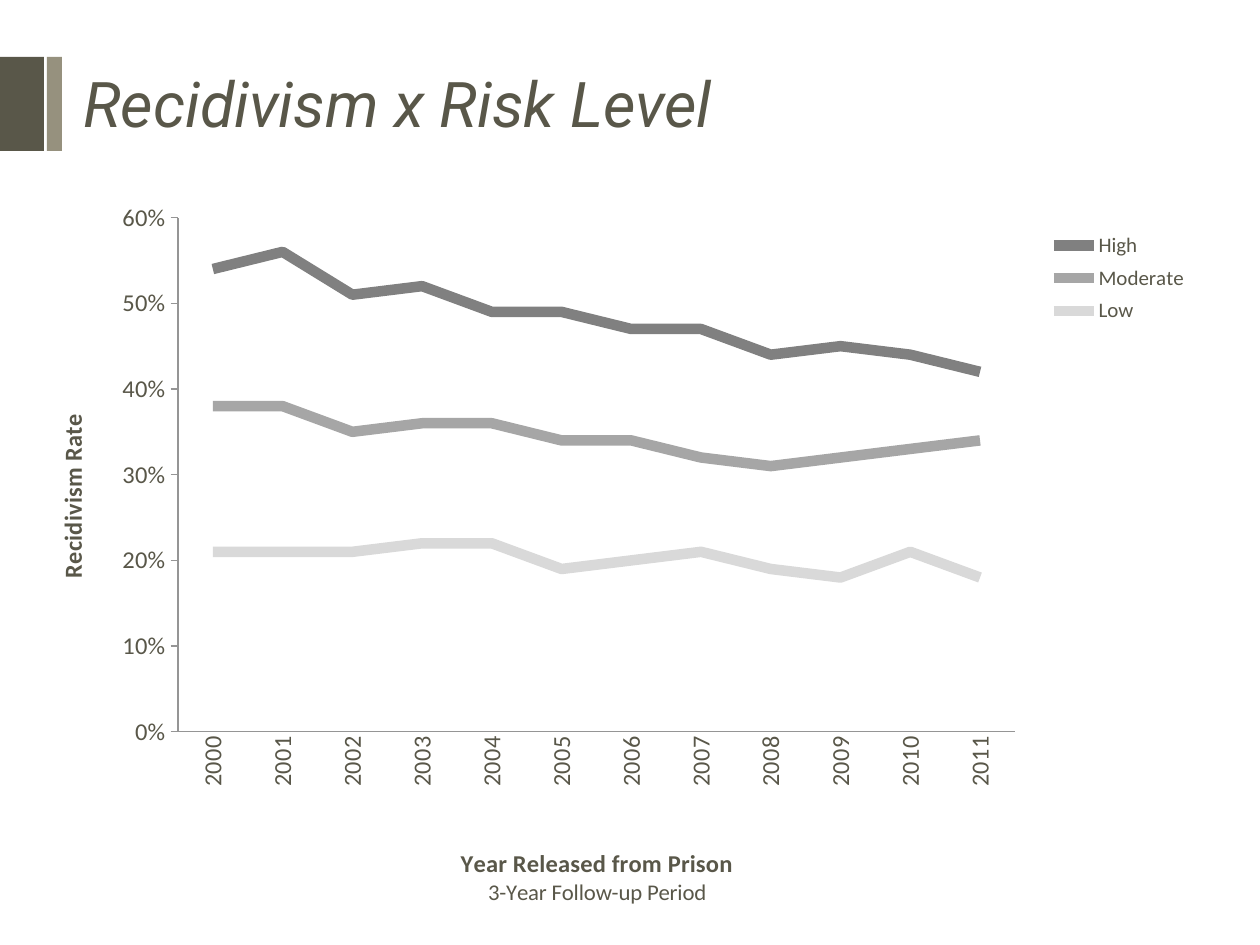
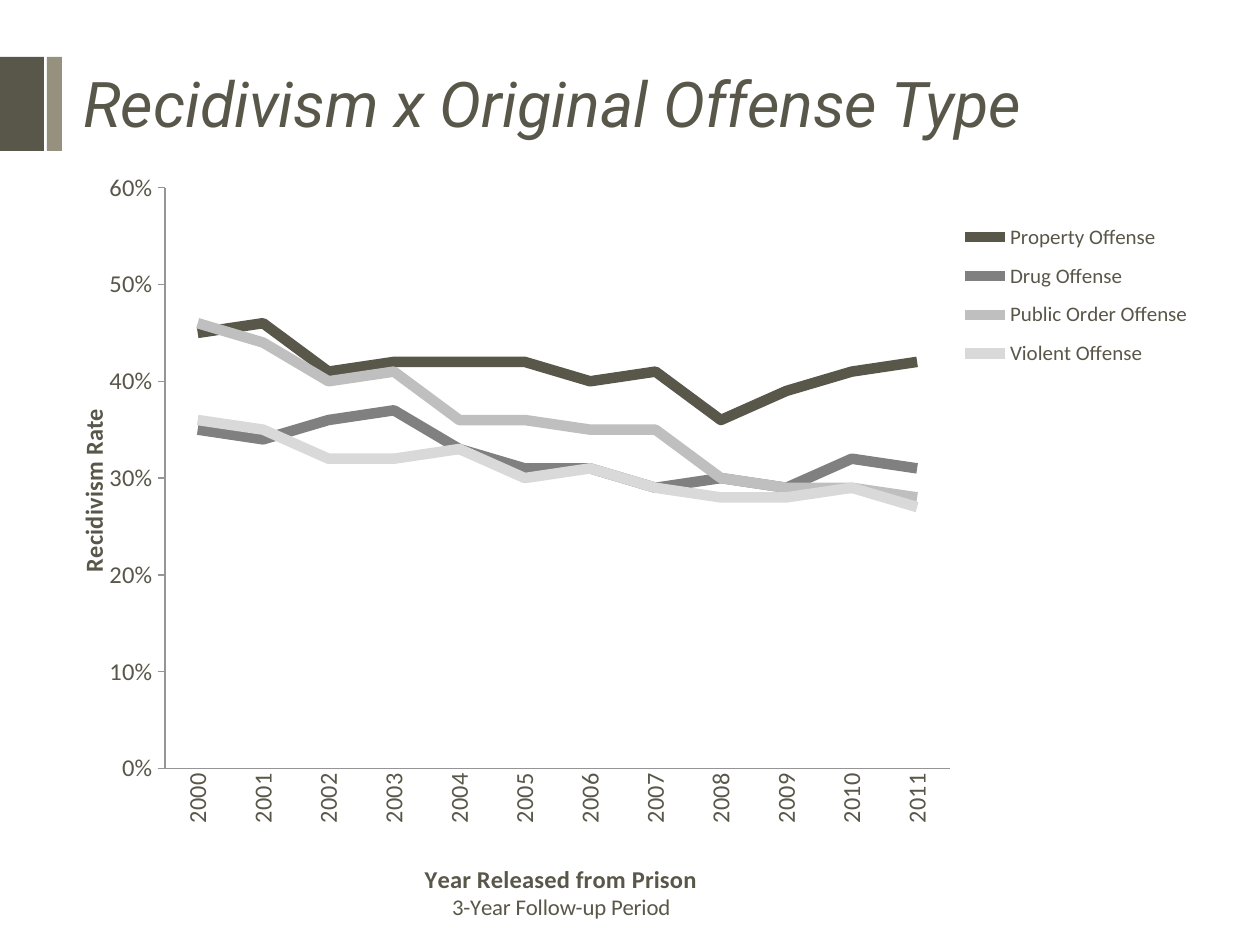
from lxml import etree
from pptx import Presentation
from pptx.chart.data import CategoryChartData
from pptx.dml.color import RGBColor
from pptx.enum.chart import XL_CHART_TYPE, XL_LEGEND_POSITION, XL_TICK_MARK
from pptx.enum.shapes import MSO_SHAPE
from pptx.enum.text import MSO_ANCHOR
from pptx.oxml.ns import qn
from pptx.util import Emu, Pt

LINE_CHART = XL_CHART_TYPE.LINE
LEGEND_RIGHT = XL_LEGEND_POSITION.RIGHT
TICK_NONE, TICK_OUT = XL_TICK_MARK.NONE, XL_TICK_MARK.OUTSIDE
RECTANGLE = MSO_SHAPE.RECTANGLE
MIDDLE = MSO_ANCHOR.MIDDLE

EMU_PER_PX = 914400 / 126
INK, OLIVE, AXIS_GREY = "595749", "96917E", "959595"
TITLE_FONT, CHART_FONT = "Roboto", "Calibri"
YEARS = [str(year) for year in range(2000, 2012)]
BANDS = [((0, 57, 44, 94), INK), ((47, 57, 15, 94), OLIVE)]
TITLE_BOX = (71, 55, 1071, 95)
QUARTER_TURN_LEFT = "-5400000"

# Boxes are left, top, width, height in px on the slide; axis titles need left and top only.
SLIDES = [
    {
        "title": "Recidivism x Risk Level",
        "chart": (32, 189, 1176, 724),
        "plot": (178, 218, 837, 521),
        "legend": (1035, 226, 168, 107),
        "rate_title": (51, 415),
        "year_title": (457, 852),
        "series": [
            ("High", "808080", [0.54, 0.56, 0.51, 0.52, 0.49, 0.49, 0.47, 0.47, 0.44, 0.45, 0.44, 0.42]),
            ("Moderate", "A6A6A6", [0.38, 0.38, 0.35, 0.36, 0.36, 0.34, 0.34, 0.32, 0.31, 0.32, 0.33, 0.34]),
            ("Low", "D9D9D9", [0.21, 0.21, 0.21, 0.22, 0.22, 0.19, 0.2, 0.21, 0.19, 0.18, 0.21, 0.18]),
        ],
    },
    {
        "title": "Recidivism x Original Offense Type",
        "chart": (53, 168, 1155, 760),
        "plot": (165, 188, 785, 588),
        "legend": (948, 211, 257, 172),
        "rate_title": (72, 409),
        "year_title": (421, 867),
        "series": [
            ("Property Offense", INK, [0.45, 0.46, 0.41, 0.42, 0.42, 0.42, 0.4, 0.41, 0.36, 0.39, 0.41, 0.42]),
            ("Drug Offense", "808080", [0.35, 0.34, 0.36, 0.37, 0.33, 0.31, 0.31, 0.29, 0.3, 0.29, 0.32, 0.31]),
            ("Public Order Offense", "BFBFBF", [0.46, 0.44, 0.4, 0.41, 0.36, 0.36, 0.35, 0.35, 0.3, 0.29, 0.29, 0.28]),
            ("Violent Offense", "D9D9D9", [0.36, 0.35, 0.32, 0.32, 0.33, 0.3, 0.31, 0.29, 0.28, 0.28, 0.29, 0.27]),
        ],
    },
]


def px(*lengths):
    return [Emu(round(length * EMU_PER_PX)) for length in lengths]


def rgb(hex_string):
    return RGBColor.from_string(hex_string)


prs = Presentation()
prs.slide_width, prs.slide_height = px(1260, 945)

for content in SLIDES:
    slide = prs.slides.add_slide(prs.slide_layouts[6])

    for box, color in BANDS:
        band = slide.shapes.add_shape(RECTANGLE, *px(*box))
        band.shadow.inherit = False
        band.fill.solid()
        band.fill.fore_color.rgb = rgb(color)
        band.line.fill.background()

    heading = slide.shapes.add_textbox(*px(*TITLE_BOX)).text_frame
    heading.word_wrap = True
    heading.vertical_anchor = MIDDLE
    run = heading.paragraphs[0].add_run()
    run.text = content["title"]
    run.font.name, run.font.size, run.font.italic = TITLE_FONT, Pt(36), True
    run.font.color.rgb = rgb(INK)

    data = CategoryChartData(number_format="0%")
    data.categories = YEARS
    for name, _, rates in content["series"]:
        data.add_series(name, rates)
    chart = slide.shapes.add_chart(LINE_CHART, *px(*content["chart"]), data).chart
    chart.has_title = False
    chart.font.name, chart.font.size = CHART_FONT, Pt(14)
    chart.font.color.rgb = rgb(INK)
    chart.plots[0].vary_by_categories = False
    for line, (_, color, _) in zip(chart.plots[0].series, content["series"]):
        line.smooth = False
        line.format.line.width = Pt(6)
        line.format.line.color.rgb = rgb(color)

    chart.has_legend = True
    chart.legend.position = LEGEND_RIGHT
    chart.legend.include_in_layout = False
    chart.legend.font.name, chart.legend.font.size = CHART_FONT, Pt(12)
    chart.legend.font.color.rgb = rgb(INK)

    years, rate = chart.category_axis, chart.value_axis
    rate.minimum_scale, rate.maximum_scale, rate.major_unit = 0, 0.6, 0.1
    rate.tick_labels.number_format = "0%"
    rate.tick_labels.number_format_is_linked = False
    year_lines = [("Year Released from Prison", 14, True), ("3-Year Follow-up Period", 13, False)]
    rate_lines = [("Recidivism Rate", 14, True)]
    for axis, tick, title_lines in [(years, TICK_NONE, year_lines), (rate, TICK_OUT, rate_lines)]:
        axis.has_major_gridlines = False
        axis.major_tick_mark, axis.minor_tick_mark = tick, TICK_NONE
        axis.format.line.color.rgb = rgb(AXIS_GREY)
        axis.format.line.width = Pt(0.75)
        axis.tick_labels.font.size = Pt(14)
        frame = axis.axis_title.text_frame
        for index, (text, size, bold) in enumerate(title_lines):
            paragraph = frame.add_paragraph() if index else frame.paragraphs[0]
            run = paragraph.add_run()
            run.text = text
            run.font.name, run.font.size, run.font.bold = CHART_FONT, Pt(size), bold
            run.font.color.rgb = rgb(INK)

    plot_area = chart.element.find(".//" + qn("c:plotArea"))
    year_axis, rate_axis = plot_area.find(qn("c:catAx")), plot_area.find(qn("c:valAx"))
    year_title, rate_title = year_axis.find(qn("c:title")), rate_axis.find(qn("c:title"))
    for turned in (year_axis.find(qn("c:txPr")), rate_title):
        body = next(turned.iter(qn("a:bodyPr")))
        body.set("rot", QUARTER_TURN_LEFT)
        body.set("vert", "horz")

    # A layout comes first in the plot area and second in a legend or title.
    legend = chart.element.find(".//" + qn("c:legend"))
    chart_left, chart_top, chart_width, chart_height = content["chart"]
    for part, key, position in [(plot_area, "plot", 0), (legend, "legend", 1),
                                (year_title, "year_title", 1), (rate_title, "rate_title", 1)]:
        for old_layout in part.findall(qn("c:layout")):
            part.remove(old_layout)
        layout = etree.Element(qn("c:layout"))
        manual = etree.SubElement(layout, qn("c:manualLayout"))
        left, top, *size = content[key]
        settings = [("layoutTarget", "inner")] if key == "plot" else []
        settings += [("xMode", "edge"), ("yMode", "edge"),
                     ("x", (left - chart_left) / chart_width), ("y", (top - chart_top) / chart_height)]
        if size:
            settings += [("w", size[0] / chart_width), ("h", size[1] / chart_height)]
        for tag, value in settings:
            etree.SubElement(manual, qn("c:" + tag)).set("val", str(value))
        part.insert(position, layout)

prs.save("out.pptx")
